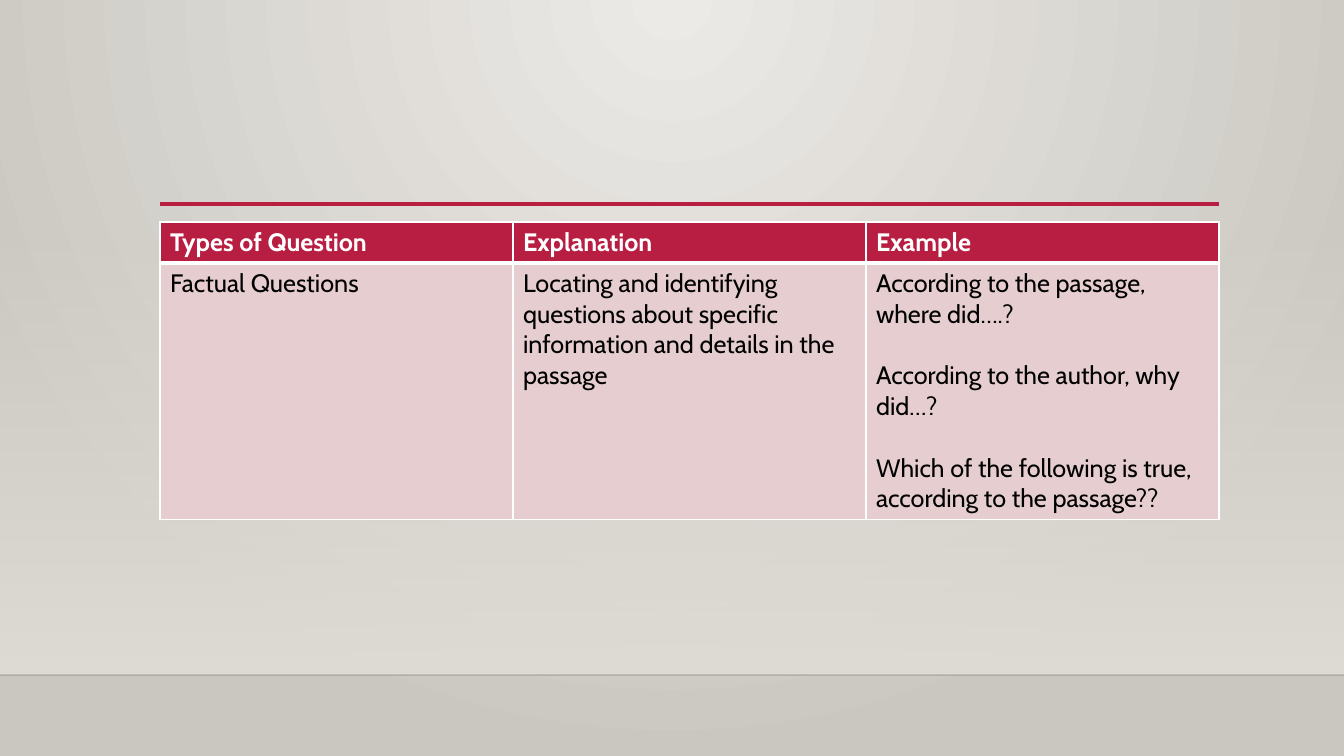
import pptx
import pptx.util
import pptx.oxml
import pptx.oxml.ns
import pptx.dml.color
import pptx.enum.shapes
import lxml.etree

qn = pptx.oxml.ns.qn
RED, WHITE, BLACK, PINK, SAND = "B71E42", "FFFFFF", "000000", "E6CDCF", "DFDBD5"
WIDE, HIGH = 1344, 756
FLOOR = 675
LEFT, COL = 160, 353


def px(num):
    return pptx.util.Emu(round(num * 914400 / 100.8))


def hue(code):
    return pptx.dml.color.RGBColor.from_string(code)


def put(item, form):
    for key, val in form.items():
        setattr(item, key, val)


def fade(node, rate):
    tint = node.find(".//" + qn("a:srgbClr"))
    lxml.etree.SubElement(tint, qn("a:alpha")).set("val", str(rate * 1000))


def blend(fill, tones):
    fill.gradient()
    for stop, tone in zip(fill.gradient_stops, tones):
        stop.color.rgb = hue(tone)


class Deck:
    text = {"name": "Cabin", "size": pptx.util.Pt(18)}
    gap = pptx.util.Pt(22)

    def __init__(self):
        self.file = pptx.Presentation()
        put(self.file, {"slide_width": px(WIDE), "slide_height": px(HIGH)})
        self.slide = self.file.slides.add_slide(self.file.slide_layouts[6])

    def back(self, tones):
        blend(self.slide.background.fill, tones)
        grad = self.slide.element.find(".//" + qn("a:gradFill"))
        ray = lxml.etree.Element(qn("a:path"), {"path": "circle"})
        lxml.etree.SubElement(ray, qn("a:fillToRect"),
                              {"l": "43000", "t": "0", "r": "43000", "b": "100000"})
        grad.replace(grad.find(qn("a:lin")), ray)

    def glow(self, x, y, w, h, tone):
        kind = pptx.enum.shapes.MSO_SHAPE.RECTANGLE
        wall = self.slide.shapes.add_shape(kind, px(x), px(y), px(w), px(h))
        wall.shadow.inherit = False
        wall.line.fill.background()
        blend(wall.fill, (tone, tone))
        wall.fill.gradient_angle = 270
        fade(wall.element.spPr.find(".//" + qn("a:gs")), 0)

    def line(self, x, y, end, tone, size, rate=100):
        kind = pptx.enum.shapes.MSO_CONNECTOR.STRAIGHT
        rule = self.slide.shapes.add_connector(kind, px(x), px(y), px(end), px(y))
        rule.line.color.rgb = hue(tone)
        rule.line.width = pptx.util.Pt(size)
        props = rule.element.spPr
        if rate < 100:
            fade(props, rate)
        lxml.etree.SubElement(props, qn("a:effectLst"))

    def edge(self, cell, sides):
        props = cell._tc.get_or_add_tcPr()
        for spot, (side, size) in enumerate(sides.items()):
            line = lxml.etree.Element(qn("a:ln" + side), {"w": str(pptx.util.Pt(size))})
            fill = lxml.etree.SubElement(line, qn("a:solidFill"))
            lxml.etree.SubElement(fill, qn("a:srgbClr"), {"val": WHITE})
            props.insert(spot, line)

    def cell(self, cell, lines, fill, tone, bold, sides):
        cell.fill.solid()
        cell.fill.fore_color.rgb = hue(fill)
        self.edge(cell, sides)
        frame = cell.text_frame
        frame.text = "\n".join(lines)
        for spot, para in enumerate(frame.paragraphs):
            if spot:
                para.space_before = self.gap
            for run in para.runs:
                put(run.font, {**self.text, "bold": bold})
                run.font.color.rgb = hue(tone)

    def table(self, x, y, wide, highs, rows):
        size = len(rows), len(rows[0])
        grid = self.slide.shapes.add_table(
            *size, px(x), px(y), px(wide * size[1]), px(sum(highs))).table
        for col in grid.columns:
            col.width = px(wide)
        for r, row in enumerate(rows):
            grid.rows[r].height = px(highs[r])
            head = r == 0
            look = (RED, WHITE, True) if head else (PINK, BLACK, False)
            sides = {"L": 1, "R": 1, "T": 1 if head else 3, "B": 3 if head else 1}
            for c, lines in enumerate(row):
                self.cell(grid.cell(r, c), lines, *look, sides)


def main():
    deck = Deck()
    deck.back(("ECEAE7", "CAC7C1"))
    deck.glow(0, 223, WIDE, FLOOR - 223, SAND)
    deck.line(0, FLOOR, WIDE, BLACK, 1, 20)
    deck.line(LEFT, 204, LEFT + 3 * COL, RED, 2.5)
    deck.table(LEFT, 222, COL, (41, 256), [
        [["Types of Question"], ["Explanation"], ["Example"]],
        [["Factual Questions"],
         ["Locating and identifying questions about specific information "
          "and details in the passage"],
         ["According to the passage, where did….?",
          "According to the author, why did…?",
          "Which of the following is true, according to the passage??"]],
    ])
    deck.file.save("out.pptx")


if __name__ == "__main__":
    main()
